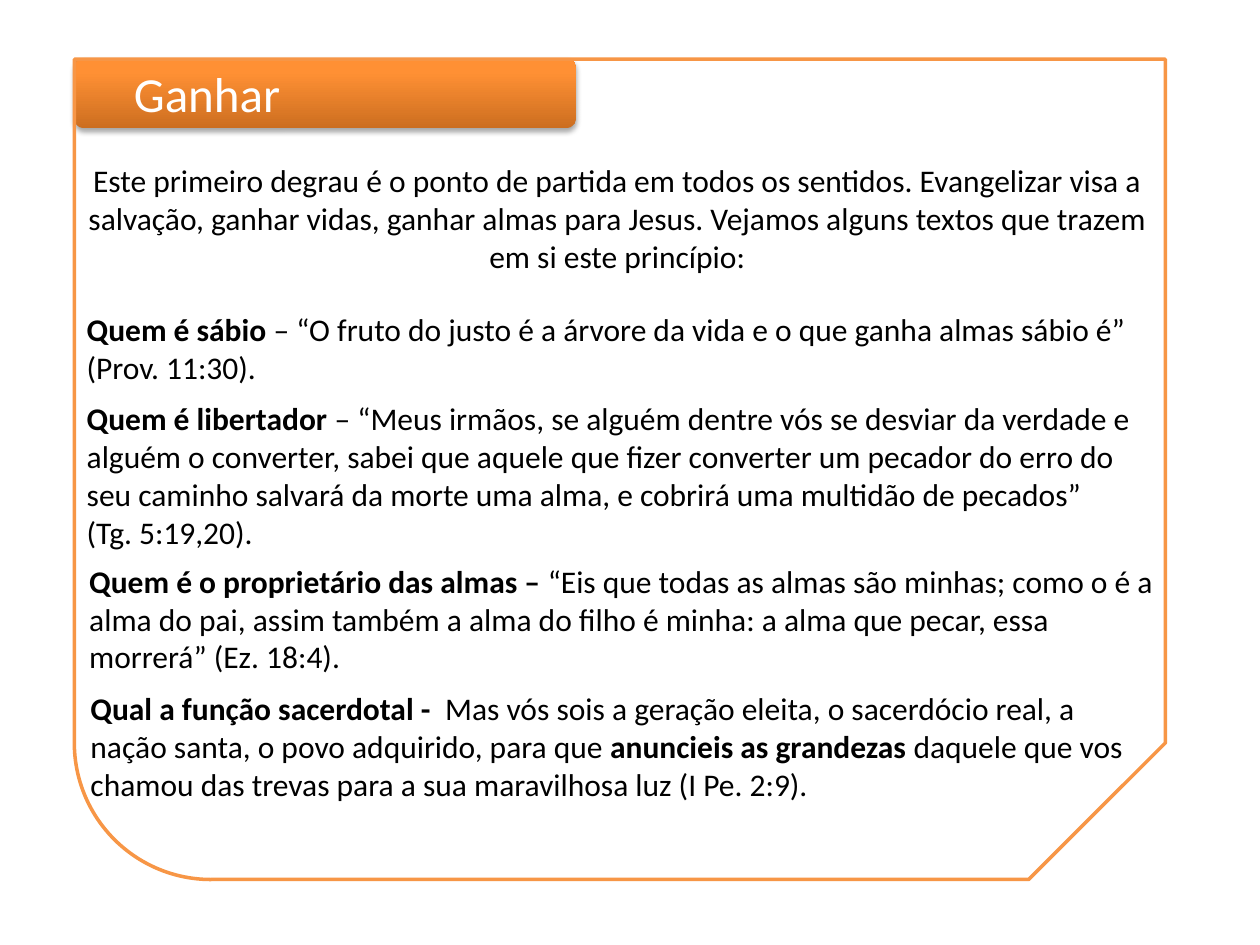
import copy

import pptx
import pptx.dml.color
import pptx.enum.shapes
import pptx.enum.text
import pptx.oxml
import pptx.oxml.ns
import pptx.util
from pptx.util import Inches

ALIGN = pptx.enum.text.PP_ALIGN
SHAPES = pptx.enum.shapes.MSO_SHAPE


def color(value):
    return pptx.dml.color.RGBColor.from_string(value)


class SlideBuilder:
    font = "Calibri"
    text_color = "000000"
    accent = "F79646"
    gradient = [(0, "CC6E20"), (0.8, "FF9034"), (1, "FF9136")]

    def __init__(self, slide):
        self.slide = slide

    def add_run(self, paragraph, text, size=18, bold=False, text_color=text_color):
        run = paragraph.add_run()
        run.text = text
        run.font.name = self.font
        run.font.size = pptx.util.Pt(size)
        run.font.bold = bold
        run.font.color.rgb = color(text_color)

    def add_shape(self, kind, left, top, width, height):
        shape = self.slide.shapes.add_shape(
            kind, Inches(left), Inches(top), Inches(width), Inches(height))
        shape.shadow.inherit = False
        return shape

    def add_shadow(self, shape):
        """Put a soft shadow straight below the shape."""
        effects = shape.element.spPr.find(pptx.oxml.ns.qn("a:effectLst"))
        effects.append(pptx.oxml.parse_xml(
            f'<a:outerShdw {pptx.oxml.ns.nsdecls("a")} blurRad="{pptx.util.Pt(3.1)}" '
            f'dist="{pptx.util.Pt(1.8)}" dir="5400000" rotWithShape="0">'
            '<a:srgbClr val="000000"><a:alpha val="35000"/></a:srgbClr></a:outerShdw>'))

    def fill_gradient(self, shape):
        """Fill from bottom to top with the three banner colours."""
        shape.fill.gradient()
        shape.fill.gradient_angle = 90
        stop_list = shape.element.spPr.find(".//" + pptx.oxml.ns.qn("a:gsLst"))
        stop_list.append(copy.deepcopy(stop_list[-1]))
        for stop, (position, value) in zip(shape.fill.gradient_stops, self.gradient):
            stop.position = position
            stop.color.rgb = color(value)

    def add_banner(self, text, left, top, width, height):
        shape = self.add_shape(SHAPES.ROUNDED_RECTANGLE, left, top, width, height)
        shape.adjustments[0] = 0.14
        self.fill_gradient(shape)
        shape.line.fill.background()
        self.add_shadow(shape)
        frame = shape.text_frame
        frame.margin_left = Inches(0.45)
        frame.vertical_anchor = pptx.enum.text.MSO_ANCHOR.MIDDLE
        paragraph = frame.paragraphs[0]
        paragraph.alignment = ALIGN.LEFT
        self.add_run(paragraph, text, size=28, text_color="FFFFFF")

    def add_frame(self, left, top, width, height):
        """Outline with its rounded and snipped corners at the bottom."""
        shape = self.add_shape(SHAPES.SNIP_ROUND_RECTANGLE, left, top, width, height)
        shape.rotation = 180
        shape.element.spPr.xfrm.set("flipH", "1")
        shape.fill.background()
        shape.line.color.rgb = color(self.accent)
        shape.line.width = pptx.util.Pt(2)

    def add_text(self, paragraphs, left, top, width, height, alignment=ALIGN.LEFT):
        """Each paragraph is a list of (text, bold) runs."""
        box = self.slide.shapes.add_textbox(
            Inches(left), Inches(top), Inches(width), Inches(height))
        frame = box.text_frame
        frame.word_wrap = True
        frame.auto_size = pptx.enum.text.MSO_AUTO_SIZE.SHAPE_TO_FIT_TEXT
        for index, runs in enumerate(paragraphs):
            paragraph = frame.add_paragraph() if index else frame.paragraphs[0]
            paragraph.alignment = alignment
            for text, bold in runs:
                self.add_run(paragraph, text, bold=bold)


INTRODUCTION = (
    "Este primeiro degrau é o ponto de partida em todos os sentidos. Evangelizar visa a "
    "salvação, ganhar vidas, ganhar almas para Jesus. Vejamos alguns textos que trazem "
    "em si este princípio:")

VERSES = [
    ((0.59, 2.41, 8.64, 0.71), [
        [("Quem é sábio", True),
         (" – “O fruto do justo é a árvore da vida e o que ganha almas sábio é”", False)],
        [("(Prov. 11:30).", False)]]),
    ((0.59, 3.12, 8.64, 1.31), [
        [("Quem é libertador", True),
         (" – “Meus irmãos, se alguém dentre vós se desviar da verdade e alguém o "
          "converter, sabei que aquele que fizer converter um pecador do erro do seu "
          "caminho salvará da morte uma alma, e cobrirá uma multidão de pecados”", False)],
        [("(Tg. 5:19,20).", False)]]),
    ((0.61, 4.41, 8.65, 1.01), [
        [("Quem é o proprietário das almas – ", True),
         ("“Eis que todas as almas são minhas; como o é a alma do pai, assim também a "
          "alma do filho é minha: a alma que pecar, essa morrerá” (Ez. 18:4).", False)]]),
    ((0.62, 5.42, 8.63, 1.01), [
        [("Qual a função sacerdotal - ", True),
         (" Mas vós sois a geração eleita, o sacerdócio real, a nação santa, o povo "
          "adquirido, para que ", False),
         ("anuncieis as grandezas", True),
         (" daquele que vos chamou das trevas para a sua maravilhosa luz (I Pe. 2:9).",
          False)]]),
]


def main():
    presentation = pptx.Presentation()
    presentation.slide_width = Inches(10)
    presentation.slide_height = Inches(7.5)
    builder = SlideBuilder(presentation.slides.add_slide(presentation.slide_layouts[6]))
    builder.add_banner("Ganhar", 0.59, 0.46, 3.98, 0.56)
    builder.add_frame(0.59, 0.47, 8.66, 6.51)
    builder.add_text([[(INTRODUCTION, False)]], 0.57, 1.23, 8.66, 1.01, ALIGN.CENTER)
    for place, paragraphs in VERSES:
        builder.add_text(paragraphs, *place)
    presentation.save("out.pptx")


if __name__ == "__main__":
    main()
